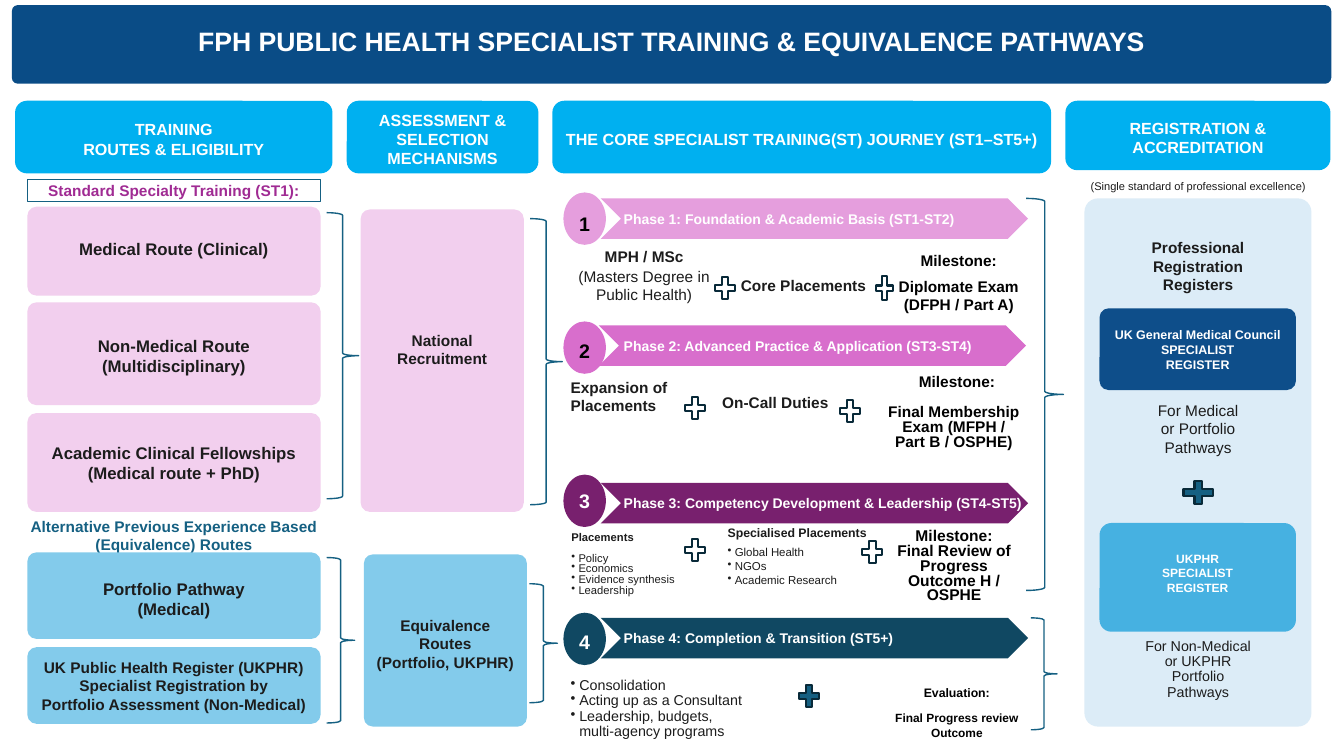
from dataclasses import dataclass

from lxml.etree import SubElement
from pptx import Presentation
from pptx.dml.color import RGBColor
from pptx.enum.shapes import MSO_SHAPE
from pptx.enum.text import MSO_ANCHOR, PP_ALIGN
from pptx.oxml.ns import qn
from pptx.util import Cm, Pt


@dataclass(frozen=True)
class Theme:
    font = "Arial"
    navy, sky, white, black, ink = "0A4C86", "00B0F0", "FFFFFF", "000000", "1C1C1C"
    pink, blue, teal, purple, outline = "F2CFEE", "83CBEB", "156082", "A02B93", "092A39"
    phases = ("E59EDD", "D86ECC", "78206E", "104862")
    panel, council, register = "DCECF7", "0E4E8A", "46B1E1"
    sizes = {
        "title": 19, "badge": 14, "card": 12, "header": 11.5, "review": 11.1,
        "body": 11, "note": 10.2, "phase": 10, "council": 8.9, "subhead": 8.8,
        "register": 8.6, "outcome": 8.5, "item": 8.2, "small": 8, "caption": 7.9,
    }


class PathwaySlide:
    def __init__(self, theme):
        self.theme = theme
        self.deck = Presentation()
        self.deck.slide_width, self.deck.slide_height = Cm(33.87), Cm(19.05)
        self.slide = self.deck.slides.add_slide(self.deck.slide_layouts[6])

    def shape(self, kind, box, fill=None, line=None, weight=1):
        shape = self.slide.shapes.add_shape(kind, *map(Cm, box))
        shape.shadow.inherit = False
        if fill:
            shape.fill.solid()
            shape.fill.fore_color.rgb = RGBColor.from_string(fill)
        else:
            shape.fill.background()
        if line:
            shape.line.color.rgb = RGBColor.from_string(line)
            shape.line.width = Pt(weight)
        else:
            shape.line.fill.background()
        return shape

    def set_text(self, shape, text, size, color, bold=True, align=PP_ALIGN.CENTER,
                 middle=True, side=0, drop=0, spacing=1.0, bullet=0):
        """Fill a shape; drop shifts centred text down, bullet is the hanging indent."""
        frame_format = {
            "word_wrap": True,
            "vertical_anchor": MSO_ANCHOR.MIDDLE if middle else MSO_ANCHOR.TOP,
            "margin_left": Cm(side), "margin_right": Cm(side),
            "margin_top": Cm(max(0, 2 * drop)), "margin_bottom": Cm(max(0, -2 * drop)),
        }
        for name, value in frame_format.items():
            setattr(shape.text_frame, name, value)
        shape.text_frame.text = text
        font_format = {"name": self.theme.font, "size": Pt(self.theme.sizes[size]), "bold": bold}
        for paragraph in shape.text_frame.paragraphs:
            paragraph.alignment = align
            paragraph.line_spacing = spacing
            if bullet:
                properties = paragraph._p.get_or_add_pPr()
                properties.set("marL", str(Cm(bullet)))
                properties.set("indent", str(-Cm(bullet)))
                SubElement(properties, qn("a:buChar")).set("char", "•")
            for run in paragraph.runs:
                for name, value in font_format.items():
                    setattr(run.font, name, value)
                run.font.color.rgb = RGBColor.from_string(color)

    def card(self, box, fill, text="", size="card", color=Theme.ink, radius=0.23, drop=0, side=0.1):
        card = self.shape(MSO_SHAPE.ROUNDED_RECTANGLE, box, fill)
        card.adjustments[0] = radius / min(box[2:])
        if text:
            self.set_text(card, text, size, color, drop=drop, side=side)

    def label(self, box, text, size="body", color=Theme.ink, **style):
        label = self.slide.shapes.add_textbox(*map(Cm, box))
        self.set_text(label, text, size, color, **style)
        return label

    def phase(self, number, left, top, badge_top, title, fill, number_color, drop):
        self.shape(MSO_SHAPE.CHEVRON, (left, top, 10.77, 1.02), fill)
        badge = self.shape(MSO_SHAPE.OVAL, (14.2, badge_top, 1.07, 1.32), fill)
        self.set_text(badge, str(number), "badge", number_color, drop=drop)
        self.label((15.72, top + 0.11, 10.59, 0.79), title, "phase",
                   self.theme.white, align=PP_ALIGN.LEFT)

    def plus(self, box, fill=None):
        self.shape(MSO_SHAPE.MATH_PLUS, box, fill, self.theme.outline, 1.5)

    def brace(self, box):
        self.shape(MSO_SHAPE.RIGHT_BRACE, box, line=self.theme.teal)


def add_headers(page, theme):
    page.card((0.3, 0.13, 33.25, 1.98), theme.navy,
              "FPH PUBLIC HEALTH SPECIALIST TRAINING & EQUIVALENCE PATHWAYS",
              "title", theme.white, radius=0.15, drop=-0.1)
    for left, width, height, heading in (
        (0.38, 8, 1.83, "TRAINING\nROUTES & ELIGIBILITY"),
        (8.74, 4.83, 1.83, "ASSESSMENT &\nSELECTION\nMECHANISMS"),
        (13.92, 12.57, 1.83, "THE CORE SPECIALIST TRAINING(ST) JOURNEY (ST1–ST5+)"),
        (26.85, 6.68, 1.75, "REGISTRATION &\nACCREDITATION"),
    ):
        page.card((left, 2.54, width, height), theme.sky, heading, "header",
                  theme.white, radius=0.3, drop=0.05)


def add_routes(page, theme):
    standard = page.shape(MSO_SHAPE.RECTANGLE, (0.69, 4.52, 7.39, 0.56), line=theme.teal, weight=0.75)
    page.set_text(standard, "Standard Specialty Training (ST1):", "body", theme.purple)
    page.label((0.69, 13.16, 7.39, 0.66),
               "Alternative Previous Experience Based (Equivalence) Routes", color=theme.teal)
    for top, height, fill, route, size, drop in (
        (5.21, 2.24, theme.pink, "Medical Route (Clinical)", "card", -0.05),
        (7.62, 2.59, theme.pink, "Non-Medical Route (Multidisciplinary)", "card", 0.05),
        (10.41, 2.49, theme.pink, "Academic Clinical Fellowships (Medical route + PhD)", "card", 0),
        (13.92, 2.18, theme.blue, "Portfolio Pathway\n(Medical)", "card", 0.08),
        (16.31, 1.93, theme.blue, "UK Public Health Register (UKPHR)\nSpecialist Registration by\n"
         "Portfolio Assessment (Non-Medical)", "body", 0),
    ):
        page.card((0.69, top, 7.39, height), fill, route, size, drop=drop, side=0.2)
    page.card((9.09, 5.28, 4.11, 7.62), theme.pink, "National\nRecruitment", "body", drop=-0.29)
    page.card((9.17, 13.97, 4.11, 4.34), theme.blue,
              "Equivalence\vRoutes\n(Portfolio, UKPHR)", "body", drop=0.08)


def add_journey(page, theme):
    phases = (
        (15.14, 5, 4.85, "Phase 1: Foundation & Academic Basis (ST1-ST2)", theme.black, 0.12),
        (15.09, 8.2, 8.1, "Phase 2: Advanced Practice & Application (ST3-ST4)", theme.black, 0.09),
        (15.14, 12.17, 11.96, "Phase 3: Competency Development & Leadership (ST4-ST5)", theme.white, 0),
        (15.14, 15.57, 15.44, "Phase 4: Completion & Transition (ST5+)", theme.white, 0.06),
    )
    for number, (left, top, badge_top, title, number_color, drop) in enumerate(phases, 1):
        page.phase(number, left, top, badge_top, title, theme.phases[number - 1], number_color, drop)

    page.label((14.38, 6.22, 3.71, 0.56), "MPH / MSc", middle=False)
    page.label((14.38, 6.73, 3.71, 1.57), "(Masters Degree in\nPublic Health)", bold=False, middle=False)
    flush = {"align": PP_ALIGN.LEFT, "middle": False}
    page.label((18.67, 6.96, 3.71, 0.56), "Core Placements", **flush)
    page.label((14.38, 9.52, 2.64, 1.2), "Expansion of Placements", **flush)
    page.label((18.2, 9.91, 3.2, 0.56), "On-Call Duties", **flush)
    placements = page.label((14.4, 13.42, 3.94, 1.8), "Placements\nPolicy\nEconomics\nEvidence synthesis\nLeadership",
                            "small", bold=False, spacing=0.8, bullet=0.18, **flush)
    heading = placements.text_frame.paragraphs[0]
    heading.space_after = Pt(7.4)
    heading.runs[0].font.bold = True
    properties = heading._p.get_or_add_pPr()
    properties.remove(properties.find(qn("a:buChar")))
    for name in ("marL", "indent"):
        properties.set(name, "0")
    page.label((18.34, 13.23, 3.71, 0.56), "Specialised Placements", "subhead", **flush)
    page.label((18.34, 13.74, 3.71, 1.57), "Global Health\nNGOs\nAcademic Research",
               "item", bold=False, bullet=0.18, **flush)
    page.label((14.38, 17.09, 7.67, 1.57),
               "Consolidation\nActing up as a Consultant\nLeadership, budgets,\vmulti-agency programs",
               "note", bold=False, spacing=0.9, bullet=0.22, **flush)

    for box, milestone, size, spacing in (
        ((22.35, 6.27, 3.63, 0.56), "Milestone:", "body", 1.0),
        ((22.35, 6.91, 3.63, 1.07), "Diplomate Exam\n(DFPH / Part A)", "body", 1.0),
        ((22.23, 8.94, 3.78, 1.32), "Milestone:", "body", 1.0),
        ((22.15, 10.54, 3.78, 0.48), "Final Membership\nExam (MFPH /\nPart B / OSPHE)", "body", 0.8),
        ((22.23, 13.44, 3.63, 1.68), "Milestone:\nFinal Review of Progress\nOutcome H / OSPHE", "review", 0.8),
        ((22.3, 17.17, 3.63, 0.56), "Evaluation:", "subhead", 1.0),
        ((22.3, 17.83, 3.63, 0.89), "Final Progress review\nOutcome", "outcome", 1.0),
    ):
        page.label(box, milestone, size, theme.black, spacing=spacing)

    page.plus((22, 6.86, 0.58, 0.81))
    for left, top in ((17.93, 6.88), (17.17, 9.91), (21.08, 9.98), (17.17, 13.49), (21.64, 13.54)):
        page.plus((left, top, 0.69, 0.75))
    page.plus((20.04, 17.17, 0.69, 0.74), theme.teal)


def add_registration(page, theme):
    page.label((27.31, 4.45, 5.77, 0.46), "(Single standard of professional excellence)", "caption", bold=False)
    page.card((27.33, 5, 5.72, 13.31), theme.panel, radius=0.34)
    page.label((27.64, 6.05, 5.11, 1.32), "Professional\nRegistration\nRegisters")
    page.card((27.71, 7.77, 4.95, 2.06), theme.council,
              "UK General Medical Council\nSPECIALIST\nREGISTER", "council", theme.white)
    page.label((27.86, 9.98, 4.67, 1.65), "For Medical\nor Portfolio\nPathways", bold=False)
    page.plus((29.69, 12.01, 1.02, 0.81), theme.teal)
    page.card((27.71, 13.18, 4.95, 2.74), theme.register,
              "UKPHR\nSPECIALIST\nREGISTER", "register", theme.white, radius=0.3, drop=-0.11)
    page.label((27.86, 16.05, 4.67, 1.65), "For Non-Medical\nor UKPHR\nPortfolio\nPathways",
               "note", bold=False, spacing=0.9)


def main():
    theme = Theme()
    page = PathwaySlide(theme)
    for add_column in (add_headers, add_routes, add_journey, add_registration):
        add_column(page, theme)
    for box in (
        (8.23, 5.36, 0.81, 7.21), (8.23, 14.05, 0.71, 4.17),
        (13.36, 5.51, 0.81, 7.21), (13.34, 14.71, 0.71, 3),
        (25.86, 5, 0.94, 9.88), (25.98, 15.57, 0.66, 2.82),
    ):
        page.brace(box)
    page.deck.save("out.pptx")


if __name__ == "__main__":
    main()
